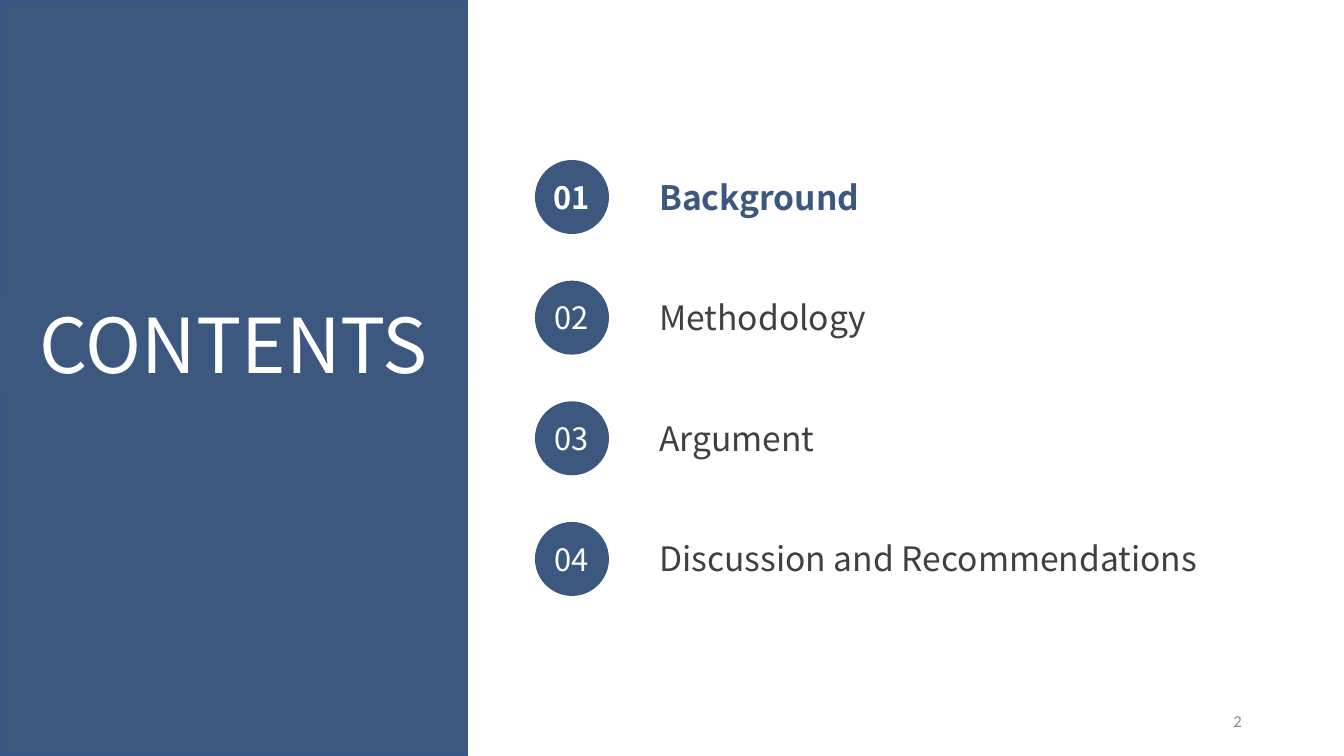
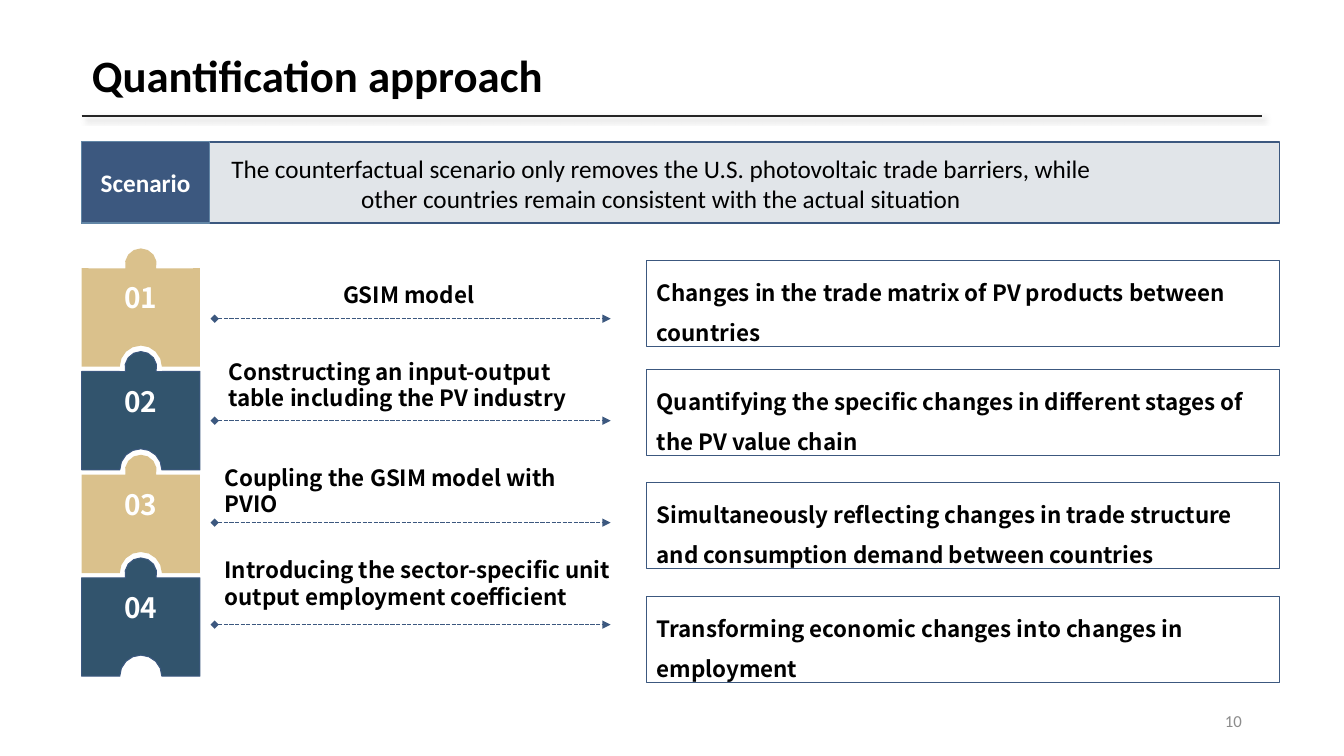
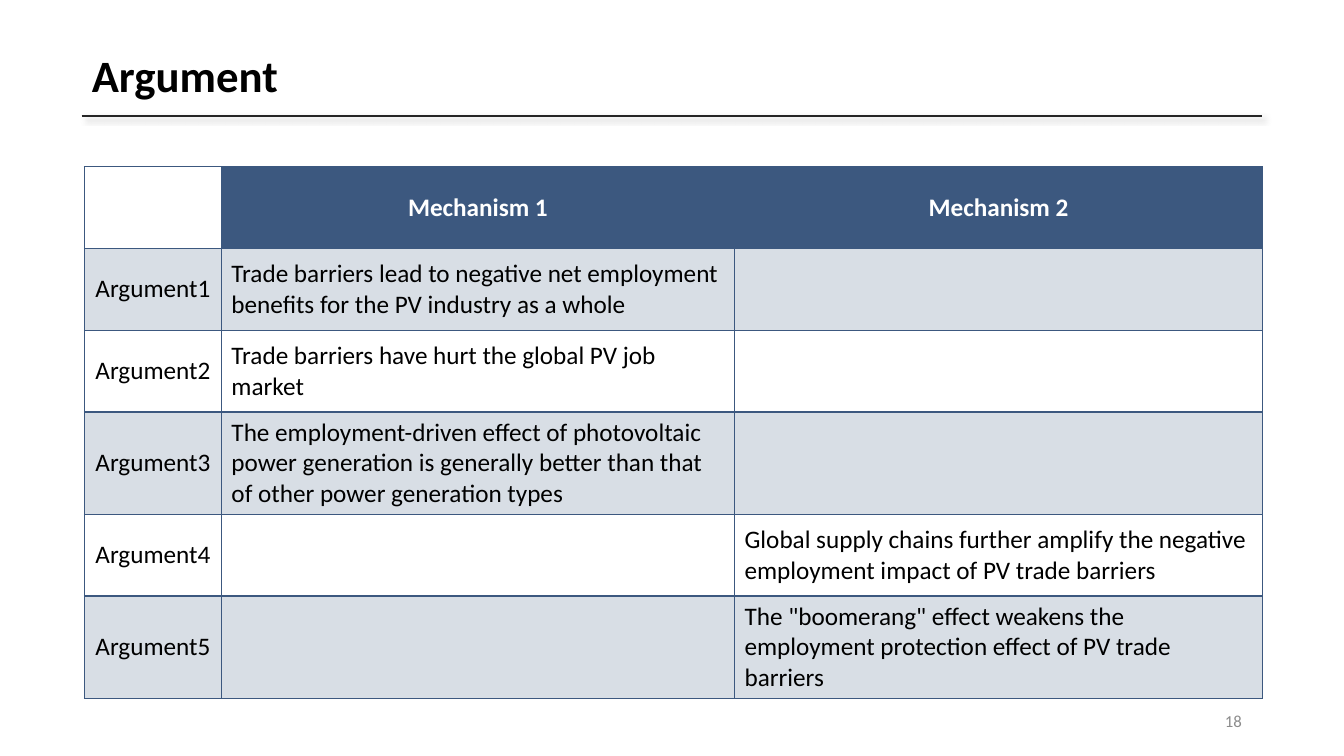
import math
from dataclasses import dataclass
from itertools import cycle

from lxml import etree
from pptx import Presentation, util as u
from pptx.dml.color import RGBColor
from pptx.enum import dml, shapes, text as text_enum
from pptx.oxml.ns import qn

Cm, Pt = u.Cm, u.Pt
ALIGN, ANCHOR = text_enum.PP_ALIGN, text_enum.MSO_ANCHOR
RECTANGLE = shapes.MSO_SHAPE.RECTANGLE


@dataclass(frozen=True)
class Theme:
    navy: str = "3C587F"
    panel_edge: str = "355696"
    tag_edge: str = "6286A6"
    teal: str = "32546D"
    sand: str = "DAC18C"
    pale: str = "E1E5E9"
    band: str = "D8DEE5"
    white: str = "FFFFFF"
    black: str = "000000"
    rule: str = "262626"
    shadow: str = "808080"
    dark_grey: str = "404040"
    page_grey: str = "8C8C8C"
    sans: str = "Calibri"
    noto: str = "Noto Sans CJK SC"
    banner: int = 54
    title: int = 32
    entry: int = 24
    badge: int = 22
    number: int = 20
    body: int = 18
    step: int = 16
    page: int = 12


THEME = Theme()


@dataclass(frozen=True)
class Box:
    """Position and size in centimetres."""
    left: float
    top: float
    width: float
    height: float

    def lengths(self) -> tuple:
        return Cm(self.left), Cm(self.top), Cm(self.width), Cm(self.height)


@dataclass(frozen=True)
class Step:
    label: str
    label_box: Box
    result: str
    result_top: float
    align: ALIGN = ALIGN.LEFT


ENTRIES = ["Background", "Methodology", "Argument", "Discussion and Recommendations"]
STEPS = [
    Step("GSIM model", Box(5.41, 6.96, 9.78, 0.84),
         "Changes in the trade matrix of PV products between countries", 6.57, ALIGN.CENTER),
    Step("Constructing an input-output table including the PV industry",
         Box(5.51, 8.89, 9.88, 1.63),
         "Quantifying the specific changes in different stages of the PV value chain", 9.31),
    Step("Coupling the GSIM model with PVIO", Box(5.41, 11.56, 10, 1.47),
         "Simultaneously reflecting changes in trade structure and consumption demand "
         "between countries", 12.17),
    Step("Introducing the sector-specific unit output employment coefficient",
         Box(5.41, 13.89, 10.52, 1.68),
         "Transforming economic changes into changes in employment", 15.03),
]
ARGUMENTS = [
    ["", "Mechanism 1", "Mechanism 2"],
    ["Argument1", "Trade barriers lead to negative net employment benefits for the "
                  "PV industry as a whole", ""],
    ["Argument2", "Trade barriers have hurt the global PV job market", ""],
    ["Argument3", "The employment-driven effect of photovoltaic power generation is "
                  "generally better than that of other power generation types", ""],
    ["Argument4", "", "Global supply chains further amplify the negative employment "
                      "impact of PV trade barriers"],
    ["Argument5", "", 'The "boomerang" effect weakens the employment protection effect '
                      "of PV trade barriers"],
]


def rgb(color: str) -> RGBColor:
    return RGBColor.from_string(color)


def write(paragraph, text: str, *, size: int, color: str = THEME.black,
          font: str = THEME.sans, bold: bool = False, align: ALIGN = ALIGN.LEFT,
          spacing=None) -> None:
    run = paragraph.add_run()
    run.text = text
    run.font.name, run.font.size, run.font.bold = font, Pt(size), bold
    run.font.color.rgb = rgb(color)
    paragraph.alignment = align
    if spacing is not None:
        paragraph.line_spacing = spacing


def prepare_frame(shape, anchor: ANCHOR = ANCHOR.TOP):
    """Make the frame wrap at a fixed size and return its first paragraph."""
    frame = shape.text_frame
    frame.word_wrap = True
    frame.auto_size = text_enum.MSO_AUTO_SIZE.NONE
    frame.vertical_anchor = anchor
    return frame.paragraphs[0]


def paint(shape, fill: str | None, edge: str | None = None, weight: float = 1) -> None:
    if fill:
        shape.fill.solid()
        shape.fill.fore_color.rgb = rgb(fill)
    else:
        shape.fill.background()
    if edge:
        shape.line.color.rgb = rgb(edge)
        shape.line.width = Pt(weight)
    else:
        shape.line.fill.background()


def move(shape, box: Box) -> None:
    shape.left, shape.top, shape.width, shape.height = box.lengths()


def add_panel(slide, box: Box, fill: str | None, edge: str | None = None,
              weight: float = 1, kind=RECTANGLE):
    shape = slide.shapes.add_shape(kind, *box.lengths())
    shape.shadow.inherit = False
    paint(shape, fill, edge, weight)
    return shape


def add_text(slide, box: Box, text: str, anchor: ANCHOR = ANCHOR.TOP, **style) -> None:
    write(prepare_frame(slide.shapes.add_textbox(*box.lengths()), anchor), text, **style)


def add_line(slide, left: float, right: float, y: float, color: str):
    """Add a horizontal line; return it with its empty effect list."""
    line = slide.shapes.add_connector(
        shapes.MSO_CONNECTOR.STRAIGHT, Cm(left), Cm(y), Cm(right), Cm(y))
    line.line.color.rgb = rgb(color)
    line.line.width = Pt(1)
    return line, etree.SubElement(line.element.spPr, qn("a:effectLst"))


def add_title_rule(slide) -> None:
    _, effects = add_line(slide, 2.06, 31.8, 2.92, THEME.rule)
    shadow = etree.SubElement(effects, qn("a:outerShdw"), blurRad=str(Pt(4)),
                              dist=str(Pt(3)), dir=str(45 * 60000))
    color = etree.SubElement(shadow, qn("a:srgbClr"), val=THEME.shadow)
    etree.SubElement(color, qn("a:alpha"), val="40000")


def add_arrow(slide, left: float, right: float, y: float) -> None:
    arrow, _ = add_line(slide, left, right, y, THEME.navy)
    arrow.line.dash_style = dml.MSO_LINE.SQUARE_DOT
    outline = arrow.element.spPr.find(qn("a:ln"))
    etree.SubElement(outline, qn("a:headEnd"), type="diamond")
    etree.SubElement(outline, qn("a:tailEnd"), type="triangle")


def add_page_number(slide, number: int) -> None:
    add_text(slide, Box(23.93, 17.65, 7.62, 1.02), str(number), ANCHOR.MIDDLE,
             size=THEME.page, color=THEME.page_grey, align=ALIGN.RIGHT)


def add_content_slide(presentation, title: str, number: int):
    slide = presentation.slides.add_slide(presentation.slide_layouts[5])
    move(slide.shapes.title, Box(2.06, 1.02, 29.21, 1.9))
    write(prepare_frame(slide.shapes.title, ANCHOR.MIDDLE), title,
          size=THEME.title, bold=True, spacing=0.9)
    add_title_rule(slide)
    add_page_number(slide, number)
    return slide


def arc(x: float, y: float, radius: float, start: float, end: float) -> list:
    """Points along an arc, angles in degrees, clockwise on the slide."""
    count = 8
    angles = [math.radians(start + (end - start) * i / count) for i in range(count + 1)]
    return [(Cm(x + radius * math.cos(a)), Cm(y + radius * math.sin(a))) for a in angles]


def add_puzzle_piece(slide, body: Box, fill: str, edge: str | None) -> None:
    """Add a block with a knob on its top and a notch in its bottom."""
    middle, bottom = body.left + body.width / 2, body.top + body.height
    right = body.left + body.width
    points = [
        (Cm(body.left), Cm(body.top)),
        *arc(middle, body.top - 0.1, 0.4, 165, 375),
        (Cm(right), Cm(body.top)),
        (Cm(right), Cm(bottom)),
        *arc(middle, bottom, 0.53, 360, 180),
        (Cm(body.left), Cm(bottom)),
    ]
    builder = slide.shapes.build_freeform(*points[0])
    builder.add_line_segments(points[1:], close=True)
    piece = builder.convert_to_shape()
    piece.shadow.inherit = False
    paint(piece, fill, edge, 0.75)


def build_contents(presentation) -> None:
    slide = presentation.slides.add_slide(presentation.slide_layouts[1])
    banner, entries = slide.shapes.title, slide.placeholders[1]
    panel = add_panel(slide, Box(0, 0, 11.79, 19.05), THEME.navy, THEME.panel_edge)
    banner.element.addprevious(panel.element)
    move(banner, Box(0, 7.37, 11.79, 2.57))
    paint(banner, THEME.navy)
    write(prepare_frame(banner, ANCHOR.MIDDLE), "CONTENTS", size=THEME.banner,
          color=THEME.white, font=THEME.noto, align=ALIGN.CENTER)

    pitch, line_height = 3.04, Pt(35)
    move(entries, Box(16.36, 4.1, 15.8, 4 * pitch))
    paragraph = prepare_frame(entries)
    for index, entry in enumerate(ENTRIES):
        current = index == 0
        if not current:
            paragraph = entries.text_frame.add_paragraph()
        write(paragraph, entry, size=THEME.entry, font=THEME.noto, bold=current,
              color=THEME.navy if current else THEME.dark_grey, spacing=line_height)
        paragraph.space_before = Pt(0)
        paragraph.space_after = Cm(pitch) - line_height
        properties = paragraph._p.get_or_add_pPr()
        properties.set("marL", "0")
        properties.set("indent", "0")
        etree.SubElement(properties, qn("a:buNone"))

        badge = add_panel(slide, Box(13.5, 4.05 + index * pitch, 1.83, 1.83),
                          THEME.navy, THEME.navy, kind=shapes.MSO_SHAPE.OVAL)
        number = prepare_frame(badge, ANCHOR.MIDDLE)
        badge.text_frame.margin_left = badge.text_frame.margin_right = 0
        write(number, f"{index + 1:02}", size=THEME.badge, color=THEME.white,
              font=THEME.noto, bold=current, align=ALIGN.CENTER)
    add_page_number(slide, 2)


def build_approach(presentation) -> None:
    slide = add_content_slide(presentation, "Quantification approach", 10)
    looks = cycle([(THEME.sand, None), (THEME.teal, THEME.navy)])
    step_style = dict(size=THEME.step, font=THEME.noto, bold=True)
    for index, (step, (fill, edge)) in enumerate(zip(STEPS, looks)):
        piece = Box(2.06, 6.76 + index * 2.6, 2.98, 2.48)
        add_puzzle_piece(slide, piece, fill, edge)
        number = add_panel(slide, Box(2.77, piece.top + 0.22, 1.55, 1.04), fill)
        frame = number.text_frame
        frame.margin_left = frame.margin_right = Cm(0.18)
        frame.margin_top = frame.margin_bottom = Cm(0.1)
        write(prepare_frame(number, ANCHOR.MIDDLE), f"{index + 1:02}", size=THEME.number,
              color=THEME.white, font=THEME.noto, bold=True, align=ALIGN.CENTER)
        add_arrow(slide, 5.41, 15.39, 8.03 + index * 2.57)
        add_text(slide, step.label_box, step.label, align=step.align, **step_style)
        result = add_panel(slide, Box(16.3, step.result_top, 15.94, 2.16),
                           None, THEME.navy, 0.75)
        write(prepare_frame(result), step.result, spacing=1.5, **step_style)

    add_panel(slide, Box(2.06, 3.58, 30.18, 2.04), THEME.pale, THEME.navy)
    tag = add_panel(slide, Box(2.06, 3.56, 3.22, 2.06), THEME.navy, THEME.tag_edge)
    write(prepare_frame(tag, ANCHOR.MIDDLE), "Scenario", size=THEME.body,
          color=THEME.white, bold=True, align=ALIGN.CENTER)
    add_text(slide, Box(5.52, 3.73, 22.28, 1.8),
             "The counterfactual scenario only removes the U.S. photovoltaic trade barriers, "
             "while other countries remain consistent with the actual situation",
             size=THEME.body, align=ALIGN.CENTER)


def add_borders(cell, color: str) -> None:
    properties = cell._tc.get_or_add_tcPr()
    for position, side in enumerate(("lnL", "lnR", "lnT", "lnB")):
        border = etree.Element(qn(f"a:{side}"), w=str(Pt(1)))
        fill = etree.SubElement(border, qn("a:solidFill"))
        etree.SubElement(fill, qn("a:srgbClr"), val=color)
        properties.insert(position, border)


def build_argument(presentation) -> None:
    slide = add_content_slide(presentation, "Argument", 18)
    widths, row_height = (3.45, 12.93, 13.31), 2.06
    box = Box(2.13, 4.2, sum(widths), row_height * len(ARGUMENTS))
    table = slide.shapes.add_table(len(ARGUMENTS), len(widths), *box.lengths()).table
    table.first_row = table.horz_banding = False
    for column, width in zip(table.columns, widths):
        column.width = Cm(width)
    for row_index, row in enumerate(ARGUMENTS):
        table.rows[row_index].height = Cm(row_height)
        header = row_index == 0
        body_fill = THEME.band if row_index % 2 else THEME.white
        for column_index, text in enumerate(row):
            cell = table.cell(row_index, column_index)
            cell.vertical_anchor = ANCHOR.MIDDLE
            if header and not text:
                cell.fill.background()
            else:
                cell.fill.solid()
                cell.fill.fore_color.rgb = rgb(THEME.navy if header else body_fill)
            add_borders(cell, THEME.navy)
            if text:
                write(cell.text_frame.paragraphs[0], text, size=THEME.body, bold=header,
                      color=THEME.white if header else THEME.black,
                      align=ALIGN.CENTER if header or column_index == 0 else ALIGN.LEFT)


def main() -> None:
    presentation = Presentation()
    presentation.slide_width, presentation.slide_height = Cm(33.87), Cm(19.05)
    build_contents(presentation)
    build_approach(presentation)
    build_argument(presentation)
    presentation.save("out.pptx")


if __name__ == "__main__":
    main()
